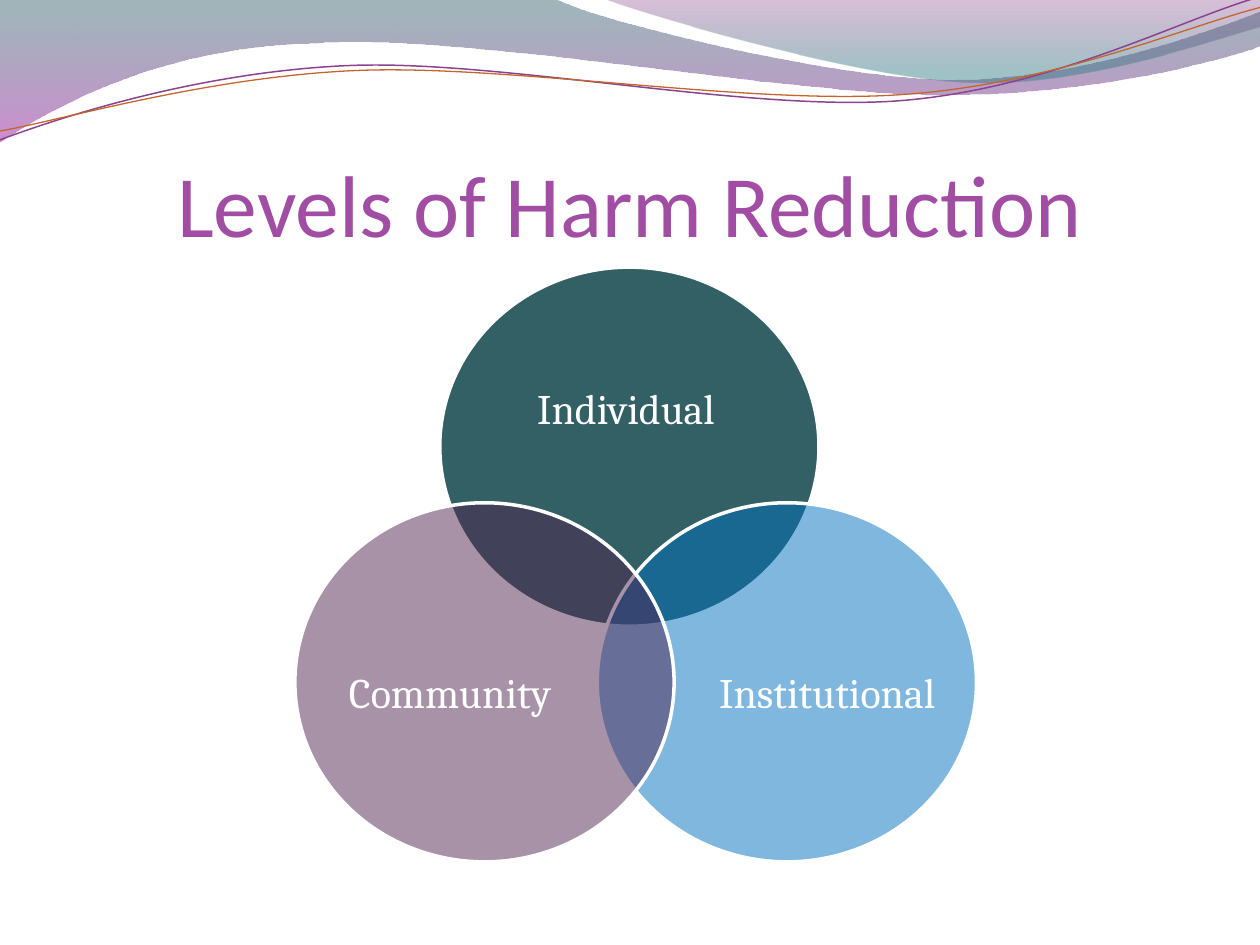
from dataclasses import dataclass
from math import cos, radians, sin
from typing import Any

from lxml.etree import SubElement
from pptx import Presentation
from pptx.dml.color import RGBColor
from pptx.enum.shapes import MSO_SHAPE as SHAPE
from pptx.enum.text import MSO_ANCHOR as ANCHOR, PP_ALIGN as ALIGN
from pptx.oxml.ns import qn
from pptx.util import Inches, Pt

COLS, ROWS = 10, 7.5
TILT = 2.7

BANDS = [
    ([(0, 0), (4.4, -0.01),
      (4.76, 0.17, 6.64, 0.63, 7.58, 0.63), (8.53, 0.63, 9.58, 0.26, 10, 0.09),
      (10.01, 0.36),
      (9.83, 0.44, 8.7, 0.76, 7.46, 0.75), (6.22, 0.75, 3.82, 0.28, 2.57, 0.34),
      (1.29, 0.36, 0.46, 0.83, -0.01, 1.13)],
     [(0, "2B6165", 45), (100, "A32FA8", 55)]),
    ([(4.79, -0.01),
      (5.09, 0.11, 6.82, 0.62, 7.69, 0.65), (8.56, 0.69, 9.61, 0.32, 10, 0.21),
      (10, 0)],
     [(0, "7C2E7F", 30), (80, "2E7980", 45), (100, "2E7980", 45)]),
]
WAVES = [
    ([(0, 1.11), (0.48, 0.93, 1.58, 0.57, 2.77, 0.52),
      (3.95, 0.47, 5.93, 0.89, 7.13, 0.8), (8.33, 0.71, 9.38, 0.15, 9.98, -0.02)],
     (4.99, 0.58), "8C438F", 0.85),
    ([(0, 1.04), (0.47, 0.96, 1.64, 0.61, 2.83, 0.56),
      (4.03, 0.51, 5.97, 0.84, 7.17, 0.75), (8.36, 0.67, 9.41, 0.21, 10, 0.06)],
     (5, 0.59), "C4652D", 0.75),
]
LEVELS = [
    ("Individual ", (3.49, 2.12), (3.9, 2.62, 2.21, 1.28), "326064", 100),
    ("Institutional", (4.74, 3.99), (5.66, 4.73, 1.81, 1.57), "0070C0", 50),
    (" Community", (2.34, 3.99), (2.63, 4.73, 1.81, 1.57), "502651", 50),
]


def rgb(color):
    """Turn a hex string into a colour."""
    return RGBColor.from_string(color)


def set_alpha(color_element, percent):
    """Give a colour element an opacity."""
    SubElement(color_element, qn("a:alpha"), val=str(percent * 1000))


def turn(segment, center, degrees):
    """Turn every point of a segment clockwise around a centre."""
    (cx, cy), angle = center, radians(degrees)
    turned = []
    for x, y in zip(segment[::2], segment[1::2]):
        dx, dy = x - cx, y - cy
        turned += [cx + dx * cos(angle) - dy * sin(angle),
                   cy + dx * sin(angle) + dy * cos(angle)]
    return turned


@dataclass
class Deck:
    """Hold the style and the current slide, placed on a COLS by ROWS grid."""

    prs: Any
    s: Any = None
    heading: str = "Calibri"
    body: str = "Cambria"
    accent: str = "A04DA3"
    light: str = "FFFFFF"

    def new_slide(self):
        """Start a slide on the blank layout."""
        self.s = self.prs.slides.add_slide(self.prs.slide_layouts[6])

    def grid(self, *cells):
        """Convert column and row pairs to slide lengths."""
        units = self.prs.slide_width / COLS, self.prs.slide_height / ROWS
        return [round(cell * units[i % 2]) for i, cell in enumerate(cells)]

    def curve(self, segments, closed):
        """Draw an outline from line and cubic segments."""
        start, *rest = [self.grid(*segment) for segment in segments]
        builder = self.s.shapes.build_freeform(*start)
        points = [pair for seg in rest for pair in zip(seg[::2], seg[1::2])]
        builder.add_line_segments(points, close=closed)
        sp = builder.convert_to_shape()
        sp.shadow.inherit = False
        lines = iter(list(sp._element.iter(qn("a:lnTo"))))
        for segment in rest:
            group = [next(lines) for _ in range(len(segment) // 2)]
            if len(group) == 3:
                cubic = group[0].makeelement(qn("a:cubicBezTo"))
                group[0].addprevious(cubic)
                for line in group:
                    cubic.append(line[0])
                    line.getparent().remove(line)
        return sp

    def band(self, segments, stops):
        """Draw a closed band with a translucent vertical gradient."""
        sp = self.curve(segments, True)
        sp.line.fill.background()
        sp.fill.gradient()
        grad = sp._element.spPr.find(qn("a:gradFill"))
        for child in list(grad):
            grad.remove(child)
        stop_list = SubElement(grad, qn("a:gsLst"))
        for position, color, opacity in stops:
            stop = SubElement(stop_list, qn("a:gs"), pos=str(position * 1000))
            set_alpha(SubElement(stop, qn("a:srgbClr"), val=color), opacity)
        SubElement(grad, qn("a:lin"), ang=str(90 * 60000), scaled="0")

    def wave(self, segments, center, color, width):
        """Draw an open curved line, tilted around its centre."""
        sp = self.curve([turn(seg, center, TILT) for seg in segments], False)
        sp.rotation = 360 - TILT
        sp.fill.background()
        sp.line.color.rgb = rgb(color)
        sp.line.width = Pt(width)

    def circle(self, box, color, opacity):
        """Draw an outlined ellipse."""
        sp = self.s.shapes.add_shape(SHAPE.OVAL, *self.grid(*box))
        sp.shadow.inherit = False
        sp.fill.solid()
        sp.fill.fore_color.rgb = rgb(color)
        if opacity < 100:
            set_alpha(sp._element.spPr.find(qn("a:solidFill"))[0], opacity)
        sp.line.color.rgb = rgb(self.light)
        sp.line.width = Pt(2)

    def text(self, box, words, size, font, color, anchor=ANCHOR.MIDDLE, spacing=0.9):
        """Write one centred line of text."""
        tf = self.s.shapes.add_textbox(*self.grid(*box)).text_frame
        tf.word_wrap = True
        tf.vertical_anchor = anchor
        tf.margin_left = tf.margin_right = tf.margin_top = tf.margin_bottom = 0
        p = tf.paragraphs[0]
        p.alignment = ALIGN.CENTER
        p.line_spacing = spacing
        r = p.add_run()
        r.text = words
        r.font.size = Pt(size)
        r.font.name = font
        r.font.color.rgb = rgb(color)


def main():
    """Build and save the slide."""
    prs = Presentation()
    prs.slide_width, prs.slide_height = Inches(10), Inches(7.5)
    deck = Deck(prs)
    deck.new_slide()
    for segments, stops in BANDS:
        deck.band(segments, stops)
    for segments, center, color, width in WAVES:
        deck.wave(segments, center, color, width)
    deck.text((0.5, 0.77, 9, 1.25), "Levels of Harm Reduction", 50,
              deck.heading, deck.accent, ANCHOR.BOTTOM, 1.0)
    for name, corner, label, color, opacity in LEVELS:
        deck.circle((*corner, 3.01, 2.85), color, opacity)
        deck.text(label, name, 24, deck.body, deck.light)
    prs.save("out.pptx")


if __name__ == "__main__":
    main()
